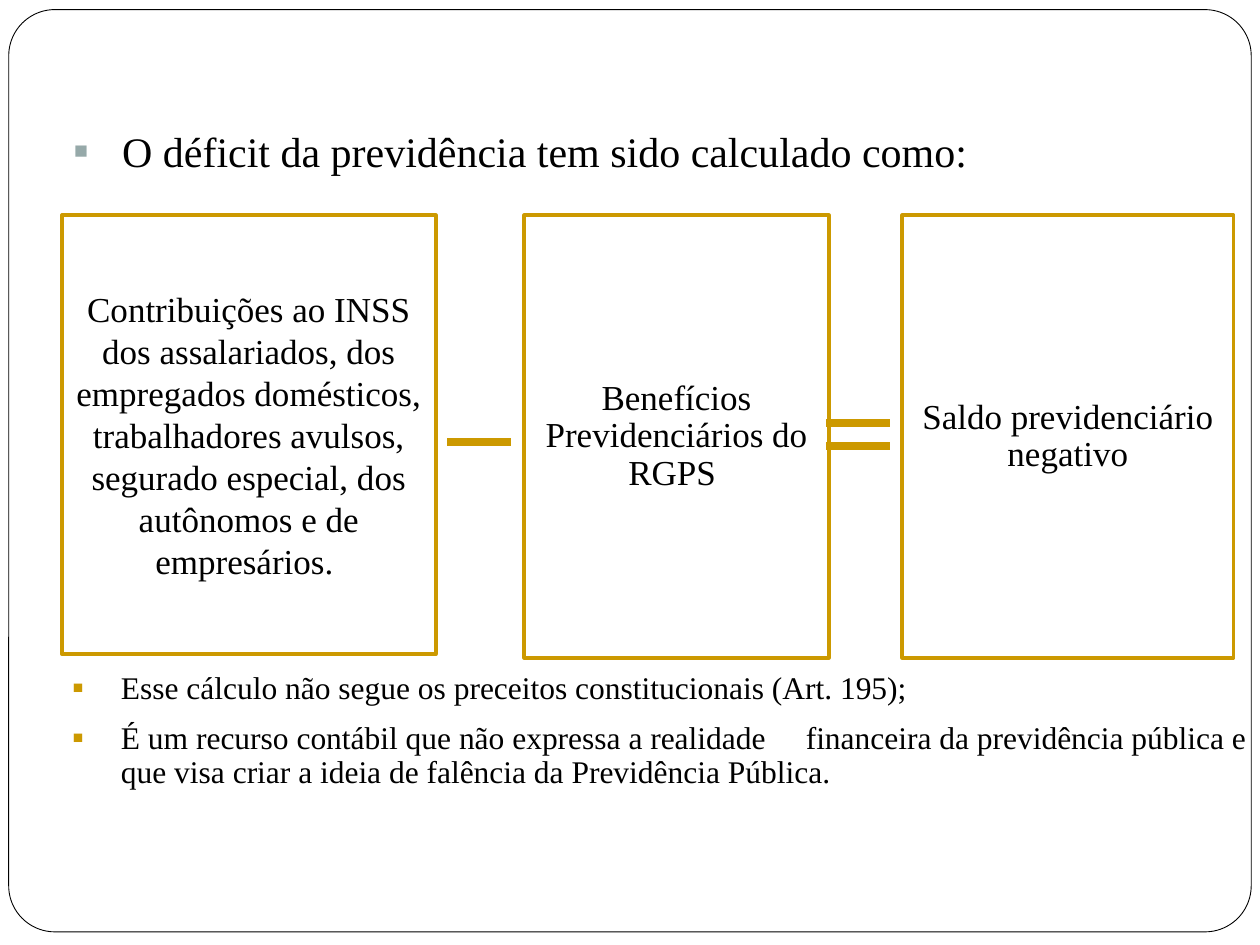
import pptx
import pptx.dml.color
import pptx.enum.shapes
import pptx.enum.text
import pptx.oxml.ns
import pptx.util
from lxml import etree

Pt = pptx.util.Pt
qn = pptx.oxml.ns.qn
SHAPES = pptx.enum.shapes.MSO_SHAPE
ALIGN = pptx.enum.text.PP_ALIGN
ANCHOR = pptx.enum.text.MSO_ANCHOR

FONT = "Times New Roman"
BLACK, WHITE, GOLD, SAGE = "000000", "FFFFFF", "CC9900", "96A9A9"
INDENT = 27.4
BOX_TOP = 123.1


def color(hex_text):
    return pptx.dml.color.RGBColor.from_string(hex_text)


def add_span(para, text, size, tracking=0):
    span = para.add_run()
    span.text = text
    span.font.name = FONT
    span.font.size = Pt(size)
    span.font.color.rgb = color(BLACK)
    if tracking:
        span.font._element.set("spc", str(tracking * 100))


def set_bullet(para, hex_text):
    props = para._p.get_or_add_pPr()
    props.set("marL", str(Pt(INDENT)))
    props.set("indent", str(-Pt(INDENT)))
    bullet_color = etree.SubElement(props, qn("a:buClr"))
    etree.SubElement(bullet_color, qn("a:srgbClr"), val=hex_text)
    etree.SubElement(props, qn("a:buSzPct"), val="55000")
    etree.SubElement(props, qn("a:buFont"), typeface=FONT)
    etree.SubElement(props, qn("a:buChar"), char="■")


def write_para(para, text, size=18, align=None, spacing=0.9, before=0, bullet=None):
    para.alignment = align
    para.line_spacing = spacing
    para.space_before = Pt(before)
    if bullet:
        set_bullet(para, bullet)
    add_span(para, text, size)
    return para


def add_text(page, left, top, width, height):
    box = page.shapes.add_textbox(Pt(left), Pt(top), Pt(width), Pt(height))
    box.text_frame.word_wrap = True
    return box.text_frame


def add_outline(page, shape_type, left, top, width, height, line, weight):
    box = page.shapes.add_shape(shape_type, Pt(left), Pt(top), Pt(width), Pt(height))
    box.shadow.inherit = False
    box.fill.background()
    box.line.color.rgb = color(line)
    box.line.width = Pt(weight)
    return box


def add_term(page, text, left, width, height, spacing=0.9):
    box = add_outline(page, SHAPES.RECTANGLE, left, BOX_TOP, width, height, GOLD, 2.25)
    box.text_frame.word_wrap = True
    box.text_frame.vertical_anchor = ANCHOR.MIDDLE
    write_para(box.text_frame.paragraphs[0], text, size=20, align=ALIGN.CENTER, spacing=spacing)


def add_stroke(page, left, y, length=36.3):
    stroke = page.shapes.add_connector(
        pptx.enum.shapes.MSO_CONNECTOR.STRAIGHT, Pt(left), Pt(y), Pt(left + length), Pt(y))
    stroke.line.color.rgb = color(GOLD)
    stroke.line.width = Pt(4.5)
    etree.SubElement(stroke._element.spPr, qn("a:effectLst"))


def main():
    deck = pptx.Presentation()
    deck.slide_width, deck.slide_height = Pt(720), Pt(540)
    page = deck.slides.add_slide(deck.slide_layouts[6])

    # Rounded page frame
    frame = add_outline(page, SHAPES.ROUNDED_RECTANGLE, 5, 5.5, 710, 527, BLACK, 0.5)
    frame.adjustments[0] = 0.05
    frame.fill.solid()
    frame.fill.fore_color.rgb = color(WHITE)

    # Heading
    heading = add_text(page, 35.3, 71.3, 656, 26.6)
    write_para(heading.paragraphs[0], "O déficit da previdência tem sido calculado como:",
               size=24, bullet=SAGE)

    # Contributions
    add_term(page, "Contribuições ao INSS dos assalariados, dos empregados domésticos, "
             "trabalhadores avulsos, segurado especial, dos autônomos e de empresários. ",
             35.3, 213.8, 250.6, spacing=1.0)

    # Remarks, with a wide gap inside the second one
    remarks = add_text(page, 34.6, 380.9, 685.4, 132.5)
    write_para(remarks.paragraphs[0],
               "Esse cálculo não segue os preceitos constitucionais (Art. 195);", bullet=GOLD)
    remark = write_para(remarks.add_paragraph(),
                        "É um recurso contábil que não expressa a realidade",
                        before=9, bullet=GOLD)
    add_span(remark, " ", 18, tracking=18)
    add_span(remark, "financeira da previdência pública e que visa criar a ideia "
             "de falência da Previdência Pública.", 18)

    # Minus benefits
    add_term(page, "Benefícios Previdenciários do RGPS ", 299.5, 174.2, 252.7)
    add_stroke(page, 255.6, 252.7)

    # Equals balance
    add_term(page, "Saldo previdenciário negativo", 515.5, 189.4, 252.7)
    for y in (241.9, 254.9):
        add_stroke(page, 472.3, y)

    deck.save("out.pptx")


if __name__ == "__main__":
    main()
